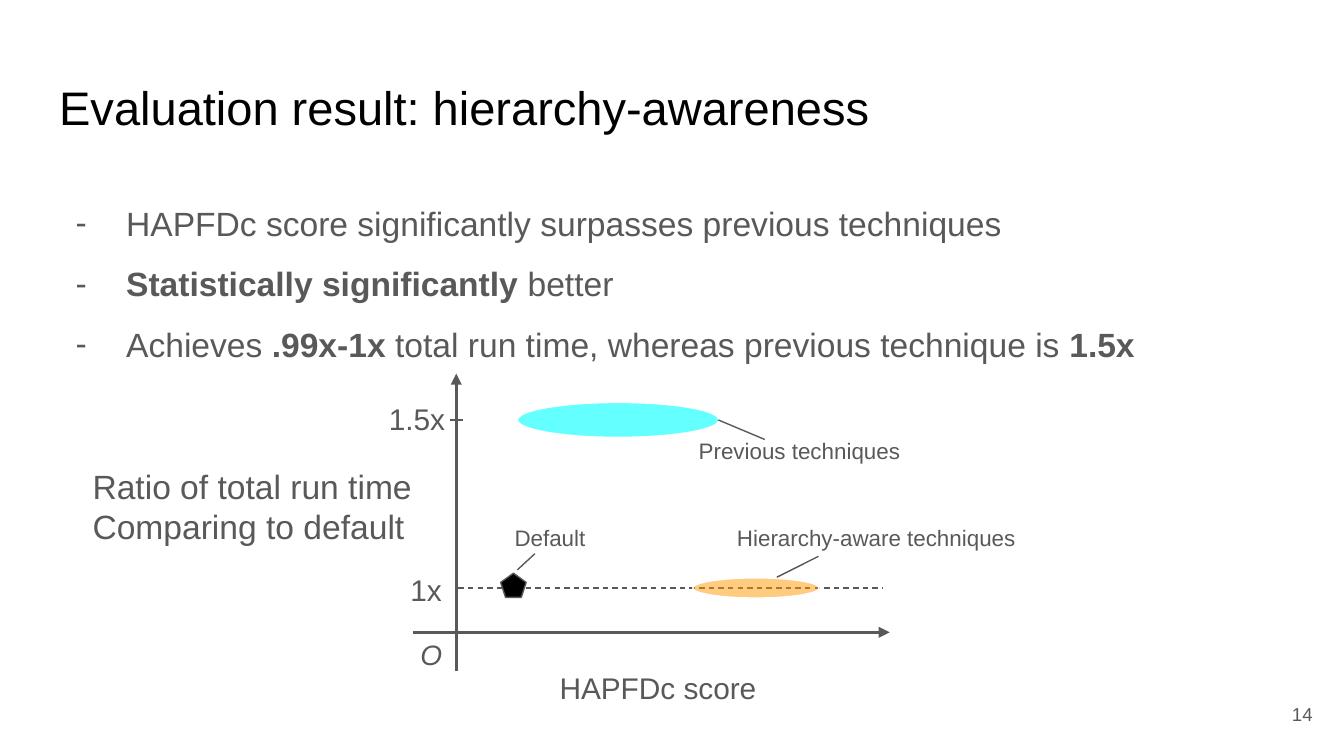
from pptx import Presentation
from pptx.dml.color import RGBColor
from pptx.enum.dml import MSO_LINE
from pptx.enum.shapes import MSO_CONNECTOR, MSO_SHAPE
from pptx.enum.text import MSO_ANCHOR, PP_ALIGN
from pptx.oxml.ns import qn
from pptx.util import Pt
from lxml.etree import SubElement

PX = 4572
FONT = "Arial"
GRAY = RGBColor(0x59, 0x59, 0x59)
BLACK = RGBColor(0, 0, 0)
WHITE = RGBColor(255, 255, 255)
CYAN = RGBColor(0x03, 0xFF, 0xFF)
ORANGE = RGBColor(0xFF, 0x99, 0x00)

TITLE = "Evaluation result: hierarchy-awareness"
POINTS = [
    [("HAPFDc score significantly surpasses previous techniques", False)],
    [("Statistically significantly", True), (" better", False)],
    [("Achieves ", False), (".99x-1x ", True),
     ("total run time, whereas previous technique is ", False), ("1.5x", True)],
]
LABELS = [
    (["O"], (606, 929, 882, 90), 15, True),
    (["HAPFDc score"], (813, 976, 882, 94), 16, False),
    (["Ratio of total run time", "Comparing to default"], (118, 673, 882, 162), 18, False),
    (["1x"], (591, 831, 882, 94), 16, False),
    (["1.5x"], (559, 577, 882, 94), 16, False),
    (["Previous techniques"], (1020, 631, 818, 80), 12, False),
    (["Default"], (746, 760, 818, 80), 12, False),
    (["Hierarchy-aware techniques"], (1077, 760, 818, 80), 12, False),
]
AXES = [(679, 998, 679, 556), (615, 941, 1324, 941)]
TICK = (689, 625, 670, 625)
BASE = (682, 875, 1314, 875)
LEADS = [(1069, 625, 1138, 654), (770, 848, 796, 824), (1156, 859, 1218, 828)]
MARKS = [
    (MSO_SHAPE.REGULAR_PENTAGON, (745, 853, 38, 36), BLACK, GRAY, 100),
    (MSO_SHAPE.OVAL, (770, 599, 300, 52), CYAN, WHITE, 61),
    (MSO_SHAPE.OVAL, (1031, 860, 188, 30), ORANGE, WHITE, 50),
]


def scale(box):
    return [n * PX for n in box]


def set_frame(frame, anchor=MSO_ANCHOR.TOP):
    frame.word_wrap = True
    frame.vertical_anchor = anchor
    frame.margin_left = frame.margin_right = 20 * PX
    frame.margin_top = frame.margin_bottom = 20 * PX
    return frame


def add_frame(box, anchor=MSO_ANCHOR.TOP):
    return set_frame(slide.shapes.add_textbox(*scale(box)).text_frame, anchor)


def add_run(para, text, size, color=GRAY, bold=False, italic=False):
    run = para.add_run()
    run.text = text
    font = run.font
    font.name, font.size, font.bold, font.italic = FONT, Pt(size), bold, italic
    font.color.rgb = color


def next_para(frame, index):
    return frame.add_paragraph() if index else frame.paragraphs[0]


def add_bullet(para):
    props = para._p.get_or_add_pPr()
    props.set("marL", str(100 * PX))
    props.set("indent", str(-75 * PX))
    color = SubElement(props, qn("a:buClr"))
    SubElement(color, qn("a:srgbClr"), val=str(GRAY))
    SubElement(props, qn("a:buFont"), typeface=FONT)
    SubElement(props, qn("a:buChar"), char="-")


def add_line(ends, width, dash=False, arrow=False):
    link = slide.shapes.add_connector(MSO_CONNECTOR.STRAIGHT, *scale(ends))
    link.line.color.rgb = GRAY
    link.line.width = Pt(width)
    if dash:
        link.line.dash_style = MSO_LINE.DASH
    if arrow:
        SubElement(link.line._get_or_add_ln(), qn("a:tailEnd"), type="triangle")
    SubElement(link._element.spPr, qn("a:effectLst"))


def add_mark(kind, box, fill, edge, alpha):
    mark = slide.shapes.add_shape(kind, *scale(box))
    mark.shadow.inherit = False
    mark.fill.solid()
    mark.fill.fore_color.rgb = fill
    mark.line.color.rgb = edge
    mark.line.width = Pt(0.75)
    if alpha < 100:
        color = mark._element.spPr.find(qn("a:solidFill"))[0]
        SubElement(color, qn("a:alpha"), val=str(alpha * 1000))


deck = Presentation()
deck.slide_width, deck.slide_height = scale((2000, 1125))
slide = deck.slides.add_slide(deck.slide_layouts[5])

title = slide.shapes.title
title.left, title.top, title.width, title.height = scale((68, 97, 1864, 126))
head = set_frame(title.text_frame).paragraphs[0]
head.alignment = PP_ALIGN.LEFT
add_run(head, TITLE, 25.2, BLACK)

body = add_frame((68, 252, 1864, 748))
for i, runs in enumerate(POINTS):
    para = next_para(body, i)
    para.line_spacing = 1.5
    add_bullet(para)
    for text, bold in runs:
        add_run(para, text, 18, bold=bold)

page = add_frame((1853, 1020, 120, 86), MSO_ANCHOR.MIDDLE).paragraphs[0]
page.alignment = PP_ALIGN.RIGHT
add_run(page, "14", 10)

for ends in AXES:
    add_line(ends, 1.5, arrow=True)
add_line(TICK, 1.5)
add_line(BASE, 0.75, dash=True)
for mark in MARKS:
    add_mark(*mark)
for ends in LEADS:
    add_line(ends, 0.75)
for lines, box, size, italic in LABELS:
    frame = add_frame(box)
    for i, text in enumerate(lines):
        add_run(next_para(frame, i), text, size, italic=italic)

deck.save("out.pptx")
